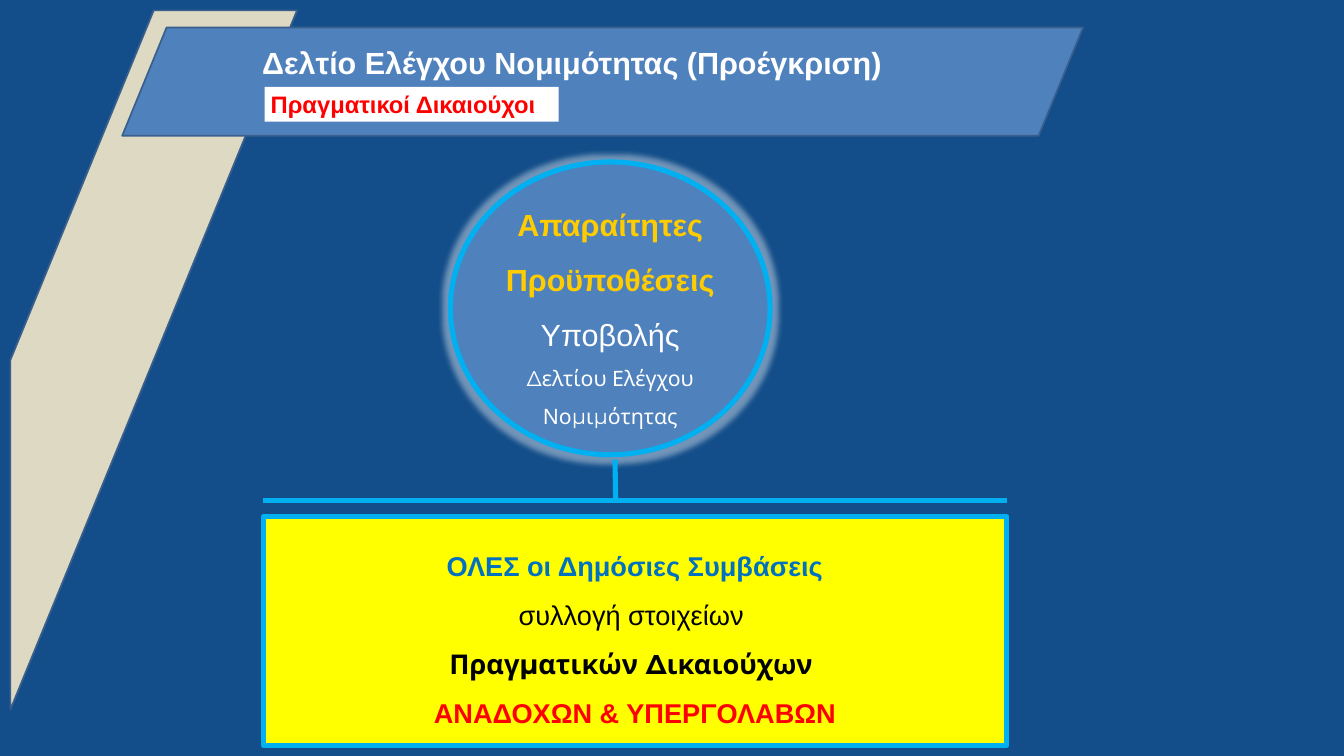
from dataclasses import dataclass

from pptx import Presentation
from pptx.dml.color import RGBColor as RGB
from pptx.enum.shapes import MSO_SHAPE as Kind
from pptx.enum.text import MSO_ANCHOR as Anchor, MSO_AUTO_SIZE as Fit, PP_ALIGN as Align
from pptx.oxml.ns import qn
from pptx.util import Pt
from lxml.etree import SubElement as Sub

PX = 9144  # 100 px to the inch


@dataclass(frozen=True)
class Theme:
    navy: str = "134E8A"
    blue: str = "4F81BD"
    edge: str = "3A5F8C"
    sky: str = "00B0F0"
    link: str = "0070C0"
    sand: str = "DDD9C3"
    gold: str = "FFCC00"
    yellow: str = "FFFF00"
    red: str = "FF0000"
    white: str = "FFFFFF"
    black: str = "000000"
    font: str = "Arial"
    alt: str = "Montserrat"
    head: int = 36
    body: int = 32
    tag: int = 28
    small: int = 25
    thin: int = 2
    thick: int = 6


def write(par, text, *, size, color, font, bold=True, align=Align.LEFT, gap=None):
    """Put one formatted run into a paragraph."""
    run = par.add_run()
    run.text = text
    run.font.size, run.font.name, run.font.bold = Pt(size), font, bold
    run.font.color.rgb = RGB.from_string(color)
    par.alignment = align
    if gap:
        par.line_spacing = gap


class Deck:
    def __init__(self, theme, wide, high):
        self.theme = theme
        self.prs = Presentation()
        self.prs.slide_width, self.prs.slide_height = wide * PX, high * PX
        self.slide = self.prs.slides.add_slide(self.prs.slide_layouts[5])
        back = self.slide.background.fill
        back.solid()
        back.fore_color.rgb = RGB.from_string(theme.navy)

    def shape(self, kind, box, fill, line=None, width=0, adj=()):
        item = self.slide.shapes.add_shape(kind, *(n * PX for n in box))
        item.shadow.inherit = False
        item.fill.solid()
        item.fill.fore_color.rgb = RGB.from_string(fill)
        if line:
            item.line.color.rgb = RGB.from_string(line)
            item.line.width = Pt(width)
        else:
            item.line.fill.background()
        for i, value in enumerate(adj):
            item.adjustments[i] = value
        return item

    def text(self, item, rows, anchor=Anchor.MIDDLE, **style):
        """Fill a shape; each row is a text and its own format."""
        frame = item.text_frame
        frame.word_wrap, frame.vertical_anchor = True, anchor
        base = dict(font=self.theme.font) | style
        for i, (words, own) in enumerate(rows):
            par = frame.add_paragraph() if i else frame.paragraphs[0]
            write(par, words, **(base | own))

    def title(self, words, box, **style):
        item = self.slide.shapes.title
        item.left, item.top, item.width, item.height = (n * PX for n in box)
        self.slide.shapes._spTree.append(item._element)  # bring to front
        self.text(item, [(words, {})], Anchor.TOP, **style)
        item.text_frame.auto_size = Fit.SHAPE_TO_FIT_TEXT

    def glow(self, item, color, size, alpha):
        effects = item._element.spPr.find(qn("a:effectLst"))
        halo = Sub(effects, qn("a:glow"), rad=str(size * PX))
        tint = Sub(halo, qn("a:srgbClr"), val=color)
        Sub(tint, qn("a:alpha"), val=str(alpha * 1000))


def main():
    t = Theme()
    deck = Deck(t, 2199, 1237)

    # Header: stripe, banner, title and tag
    deck.shape(Kind.DIAGONAL_STRIPE, (17, 17, 469, 1144), t.sand, t.edge, t.thin)
    deck.shape(Kind.PARALLELOGRAM, (200, 45, 1572, 177), t.blue, t.edge, t.thin, [0.41])
    deck.title("Δελτίο Ελέγχου Νομιμότητας (Προέγκριση)", (419, 67, 1353, 71),
               size=t.head, color=t.white)
    tag = deck.shape(Kind.RECTANGLE, (433, 142, 481, 57), t.white)
    deck.text(tag, [("Πραγματικοί Δικαιούχοι", {})], Anchor.TOP, size=t.tag, color=t.red)

    # Circle with the conditions
    spread = dict(align=Align.CENTER, gap=1.5)
    disc = deck.shape(Kind.OVAL, (737, 265, 523, 479), t.blue, t.sky, t.thick)
    deck.glow(disc, t.white, 18, 40)
    deck.text(disc, [
        ("Απαραίτητες Προϋποθέσεις", dict(color=t.gold, bold=True)),
        ("Υποβολής", {}),
        ("Δελτίου Ελέγχου Νομιμότητας", dict(size=t.small, font=t.alt)),
    ], size=t.head, color=t.white, bold=False, **spread)

    # Callout turned on its side, with upright text
    note = deck.shape(Kind.LINE_CALLOUT_1_BORDER_AND_ACCENT_BAR, (852, 424, 374, 1217),
                      t.yellow, t.sky, t.thick, [0.526, -0.072, 0.527, -0.25])
    note.rotation = 90
    note.text_frame._txBody.bodyPr.set("vert", "vert270")
    deck.text(note, [
        ("ΟΛΕΣ οι Δημόσιες Συμβάσεις", dict(color=t.link)),
        ("συλλογή στοιχείων ", dict(bold=False)),
        ("Πραγματικών Δικαιούχων ", dict(font=t.alt)),
        ("ΑΝΑΔΟΧΩΝ & ΥΠΕΡΓΟΛΑΒΩΝ", dict(color=t.red)),
    ], size=t.body, color=t.black, **spread)

    deck.prs.save("out.pptx")


if __name__ == "__main__":
    main()
